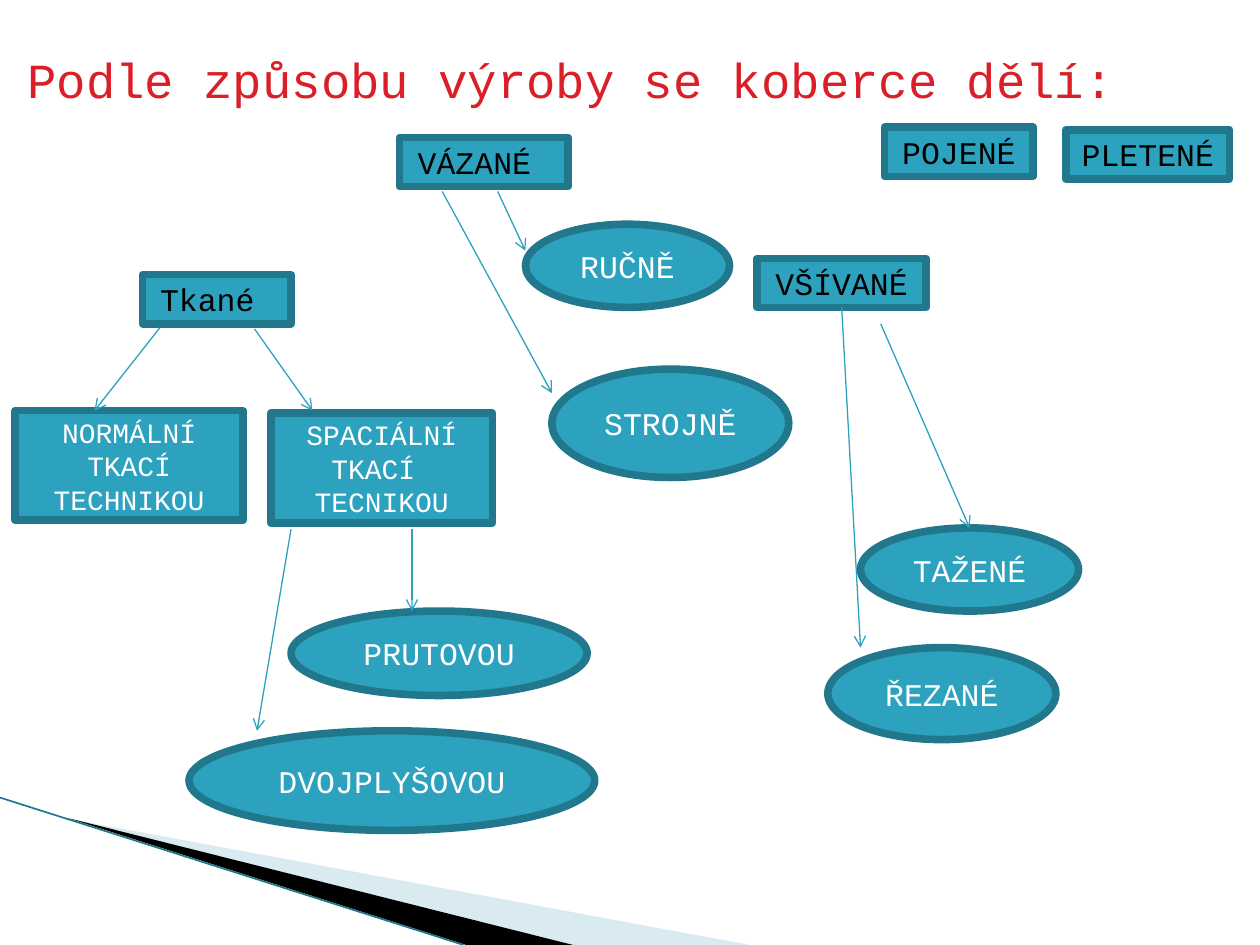
import pptx
import pptx.dml.color
import pptx.enum.shapes
import pptx.enum.text
import pptx.util
from lxml import etree
from pptx.oxml.ns import qn

Inches, Pt = pptx.util.Inches, pptx.util.Pt
KIND = pptx.enum.shapes.MSO_SHAPE
STRAIGHT = pptx.enum.shapes.MSO_CONNECTOR.STRAIGHT
TOP, BOTTOM = 0, 2

THEME = {
    "font": "Courier New",
    "title_size": 28, "label_size": 18, "technique_size": 16,
    "title": "DA1F28", "dark": "000000", "light": "FFFFFF",
    "fill": "2DA2BF", "border": "21788D", "border_width": 4.33,
    "arrow_width": 0.75,
    "wedge_pale": "A0CBDC", "wedge_alpha": 40, "edge": "21788D", "edge_width": 0.95,
}

# Content: (lines, left, top, width, height)
TITLE = "Podle způsobu výroby se koberce dělí:"
CATEGORIES = [
    (["Tkané "], 1.13, 2.18, 1.18, 0.39),
    (["VÁZANÉ "], 3.17, 1.09, 1.34, 0.39),
    (["VŠÍVANÉ"], 6.01, 2.05, 1.34, 0.39),
    (["POJENÉ"], 7.02, 1.01, 1.18, 0.39),
    (["PLETENÉ"], 8.46, 1.03, 1.3, 0.39),
]
TECHNIQUES = [
    (["NORMÁLNÍ", "TKACÍ", "TECHNIKOU"], 0.12, 3.26, 1.81, 0.87),
    (["SPACIÁLNÍ", "TKACÍ ", "TECNIKOU"], 2.15, 3.28, 1.76, 0.87),
]
VARIANTS = [
    (["PRUTOVOU"], 2.31, 4.85, 2.35, 0.67),
    (["DVOJPLYŠOVOU"], 1.5, 5.8, 3.22, 0.79),
    (["TAŽENÉ"], 6.83, 4.19, 1.73, 0.66),
    (["ŘEZANÉ"], 6.57, 5.14, 1.81, 0.73),
    (["RUČNĚ"], 4.17, 1.78, 1.62, 0.66),
    (["STROJNĚ"], 4.38, 2.93, 1.88, 0.86),
]
# Arrows: (start, end, label joined at its bottom, label joined at its top)
ARROWS = [
    ((1.27, 2.6), (0.75, 3.26), None, None),
    ((2.02, 2.61), (2.48, 3.26), None, None),
    ((3.27, 4.2), (3.27, 4.85), None, None),
    ((2.31, 4.2), (2.04, 5.8), None, None),
    ((3.95, 1.52), (4.17, 1.99), None, None),
    ((3.51, 1.52), (4.38, 3.12), None, None),
    ((6.99, 2.57), (7.7, 4.19), None, "TAŽENÉ"),
    ((6.68, 2.44), (6.83, 5.14), "VŠÍVANÉ", None),
]
# Corner decoration: (points, colour, opacity in percent)
WEDGES = [
    ([(0.55, 6.5), (5.95, 7.5), (4.56, 7.5)], THEME["wedge_pale"], THEME["wedge_alpha"]),
    ([(0.53, 6.49), (4.55, 7.5), (3.7, 7.5)], THEME["dark"], 100),
]
EDGE = ((0, 6.33), (3.68, 7.5))


def rgb(colour):
    return pptx.dml.color.RGBColor.from_string(colour)


def add_text(paragraph, text, size, colour):
    run = paragraph.add_run()
    run.text = text
    run.font.name = THEME["font"]
    run.font.size = Pt(size)
    run.font.color.rgb = rgb(colour)


def add_label(slide, kind, label, size, colour):
    lines, *place = label
    shape = slide.shapes.add_shape(kind, *map(Inches, place))
    shape.shadow.inherit = False
    shape.fill.solid()
    shape.fill.fore_color.rgb = rgb(THEME["fill"])
    shape.line.color.rgb = rgb(THEME["border"])
    shape.line.width = Pt(THEME["border_width"])
    frame = shape.text_frame
    frame.word_wrap = True
    frame.vertical_anchor = pptx.enum.text.MSO_ANCHOR.MIDDLE
    for number, line in enumerate(lines):
        paragraph = frame.add_paragraph() if number else frame.paragraphs[0]
        paragraph.alignment = pptx.enum.text.PP_ALIGN.CENTER
        add_text(paragraph, line, size, colour)
    return shape


def add_line(slide, start, end, colour, width):
    line = slide.shapes.add_connector(STRAIGHT, *map(Inches, start + end))
    line.line.color.rgb = rgb(colour)
    line.line.width = Pt(width)
    etree.SubElement(line._element.spPr, qn("a:effectLst"))
    return line


def add_wedge(slide, points, colour, opacity):
    corners = [(Inches(x), Inches(y)) for x, y in points]
    builder = slide.shapes.build_freeform(*corners[0])
    builder.add_line_segments(corners[1:], close=True)
    wedge = builder.convert_to_shape()
    wedge.shadow.inherit = False
    wedge.fill.solid()
    wedge.fill.fore_color.rgb = rgb(colour)
    wedge.line.fill.background()
    if opacity < 100:
        tint = wedge._element.spPr.find(qn("a:solidFill"))[0]
        etree.SubElement(tint, qn("a:alpha"), val=str(opacity * 1000))


def main():
    deck = pptx.Presentation()
    deck.slide_width, deck.slide_height = Inches(10), Inches(7.5)
    slide = deck.slides.add_slide(deck.slide_layouts[6])

    # Corner decoration
    for wedge in WEDGES:
        add_wedge(slide, *wedge)
    add_line(slide, *EDGE, THEME["edge"], THEME["edge_width"])

    # Title
    title = slide.shapes.add_textbox(*map(Inches, (0.12, 0.26, 9.88, 1.65))).text_frame
    title.word_wrap = True
    title.margin_top = Inches(0.13)
    add_text(title.paragraphs[0], TITLE, THEME["title_size"], THEME["title"])

    # Categories, weaving techniques and their variants
    groups = [
        (CATEGORIES, KIND.RECTANGLE, THEME["label_size"], THEME["dark"]),
        (TECHNIQUES, KIND.RECTANGLE, THEME["technique_size"], THEME["light"]),
        (VARIANTS, KIND.OVAL, THEME["label_size"], THEME["light"]),
    ]
    labels = {}
    for group, kind, size, colour in groups:
        for label in group:
            labels[label[0][0]] = add_label(slide, kind, label, size, colour)

    # Arrows
    for start, end, source, target in ARROWS:
        arrow = add_line(slide, start, end, THEME["fill"], THEME["arrow_width"])
        etree.SubElement(arrow.line._get_or_add_ln(), qn("a:tailEnd"), type="arrow")
        if source:
            arrow.begin_connect(labels[source], BOTTOM)
        if target:
            arrow.end_connect(labels[target], TOP)

    deck.save("out.pptx")


if __name__ == "__main__":
    main()
